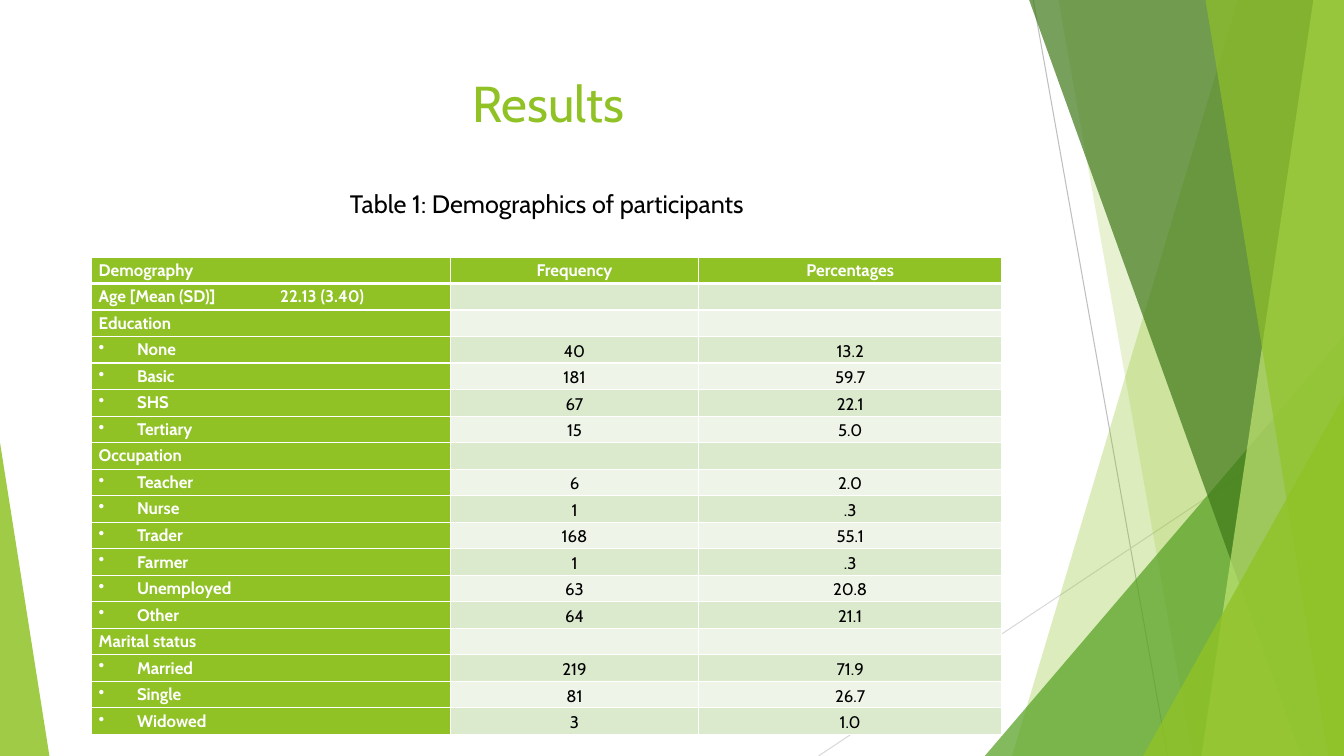
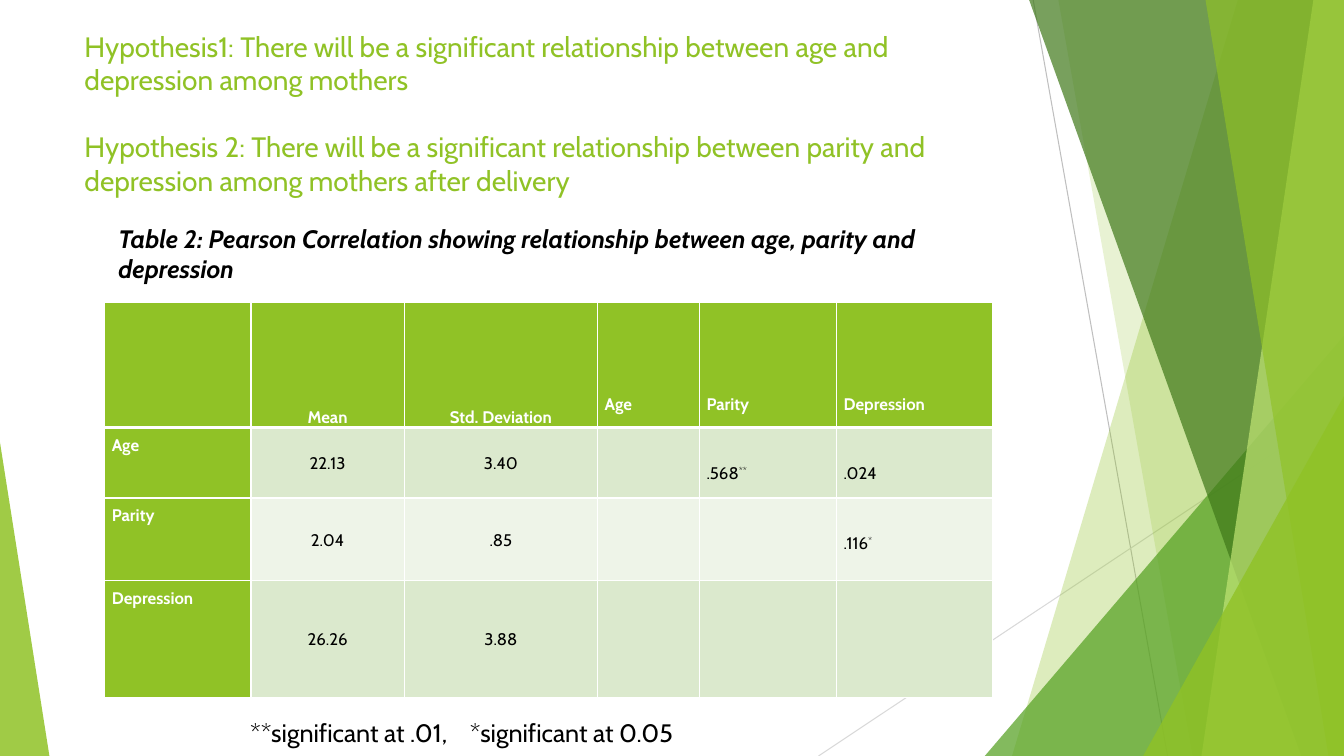
from lxml.etree import SubElement
from pptx import Presentation
from pptx.dml.color import RGBColor
from pptx.enum.shapes import MSO_CONNECTOR, MSO_SHAPE
from pptx.enum.text import MSO_ANCHOR, PP_ALIGN
from pptx.oxml.ns import qn
from pptx.util import Inches, Pt

COLORS = {
    "lime": "90C226", "green": "54A021", "forest": "3F7819", "pale": "C0E474",
    "band_dark": "DBE9CD", "band_light": "EEF4E8", "white": "FFFFFF",
    "black": "000000", "gray": "BFBFBF", "silver": "D9D9D9",
}
COLUMNS, ROWS = 160, 90
UNIT = Inches(1) / 12
LEFT, CENTER = PP_ALIGN.LEFT, PP_ALIGN.CENTER
TOP, MIDDLE, BOTTOM = MSO_ANCHOR.TOP, MSO_ANCHOR.MIDDLE, MSO_ANCHOR.BOTTOM


def grid(*lengths):
    return [round(length * UNIT) for length in lengths]


def color(name):
    return RGBColor.from_string(COLORS[name])


class Deck:
    """Builds slides in one style on a grid of 160 columns by 90 rows."""

    font = "Cabin"

    def __init__(self):
        self.presentation = Presentation()
        width, height = grid(COLUMNS, ROWS)
        self.presentation.slide_width = width
        self.presentation.slide_height = height
        self.slide = None

    def add_slide(self):
        layout = self.presentation.slide_layouts[6]
        self.slide = self.presentation.slides.add_slide(layout)
        self.line((123, 0), (139, ROWS), "gray")
        self.line((COLUMNS, 48.36), (97.44, ROWS), "silver")
        self.facet(147.36, 120.48, "lime", 30)
        self.facet(126, 141.96, "lime", 20)
        self.triangle(117.24, 39.96, COLUMNS, 1, "green", 72)
        self.facet(122.52, 154.92, "forest", 70)
        self.facet(156.36, 143.04, "pale", 70)
        self.facet(143.52, 158.16, "lime", 65)
        self.triangle(136.08, 47.16, COLUMNS, 1, "lime", 80)
        self.triangle(0, 52.68, 5.88, 0, "lime", 85)

    def line(self, start, end, name):
        connector = self.slide.shapes.add_connector(
            MSO_CONNECTOR.STRAIGHT, *grid(*start, *end))
        connector.line.color.rgb = color(name)
        connector.line.width = Pt(0.75)
        SubElement(connector._element.spPr, qn("a:effectLst"))

    def paint(self, shape, name, opacity=100):
        shape.shadow.inherit = False
        shape.fill.solid()
        shape.fill.fore_color.rgb = color(name)
        shape.line.fill.background()
        if opacity < 100:
            fill = shape._element.spPr.find(".//" + qn("a:srgbClr"))
            SubElement(fill, qn("a:alpha"), val=str(opacity * 1000))

    def facet(self, top_column, bottom_column, name, opacity):
        builder = self.slide.shapes.build_freeform(*grid(top_column, 0))
        corners = [(COLUMNS, 0), (COLUMNS, ROWS), (bottom_column, ROWS)]
        builder.add_line_segments([grid(*corner) for corner in corners])
        self.paint(builder.convert_to_shape(), name, opacity)

    def triangle(self, left, top, right, apex, name, opacity):
        shape = self.slide.shapes.add_shape(
            MSO_SHAPE.ISOSCELES_TRIANGLE,
            *grid(left, top, right - left, ROWS - top))
        shape.adjustments[0] = apex
        self.paint(shape, name, opacity)

    def add_text(self, paragraph, text, size, name, align=LEFT, bold=False,
                 italic=False, tab=None):
        paragraph.alignment = align
        body = text.rstrip("*")
        for part, raised in ((body, False), (text[len(body):], True)):
            if not part:
                continue
            run = paragraph.add_run()
            run.text = part
            run.font.name = self.font
            run.font.size = Pt(size)
            run.font.color.rgb = color(name)
            run.font.bold = bold
            run.font.italic = italic
            if raised:
                run._r.get_or_add_rPr().set("baseline", "30000")
        if tab:
            tabs = SubElement(paragraph._p.get_or_add_pPr(), qn("a:tabLst"))
            SubElement(tabs, qn("a:tab"), pos=str(grid(tab)[0]), algn="l")

    def title(self, texts, top, height, size, align=LEFT):
        box = self.slide.shapes.add_textbox(*grid(8.88, top, 112.8, height))
        frame = box.text_frame
        frame.word_wrap = True
        for index, text in enumerate(texts):
            paragraph = frame.add_paragraph() if index else frame.paragraphs[0]
            if index:
                paragraph.space_before = Pt(size * 1.2)
            self.add_text(paragraph, text, size, "lime", align)

    def caption(self, text, box, inset=1.2, **style):
        shape = self.slide.shapes.add_shape(
            MSO_SHAPE.ROUNDED_RECTANGLE, *grid(*box))
        self.paint(shape, "white")
        frame = shape.text_frame
        frame.word_wrap = True
        frame.vertical_anchor = MIDDLE
        frame.margin_left = grid(inset)[0]
        self.add_text(frame.paragraphs[0], text, 18, "black", **style)

    def table(self, left, top, columns, rows, data, layout):
        frame = self.slide.shapes.add_table(
            len(rows), len(columns),
            *grid(left, top, sum(columns), sum(rows)))
        table = frame.table
        table.horz_banding = False
        for column, width in zip(table.columns, grid(*columns)):
            column.width = width
        for row, height in zip(table.rows, grid(*rows)):
            row.height = height
        for row_index, texts in enumerate(data):
            for column_index, text in enumerate(texts):
                self.cell(table.cell(row_index, column_index), text,
                          row_index, column_index,
                          **layout(row_index, column_index))

    def cell(self, cell, text, row, column, anchor=TOP, drop=0, spacing=1.15,
             align=LEFT, tab=None):
        heading = row == 0 or column == 0
        properties = cell._tc.get_or_add_tcPr()
        for side in "LRTB":
            thick = (row == 0 and side == "B") or (row == 1 and side == "T")
            border = SubElement(properties, qn("a:ln" + side),
                                w=str(Pt(3 if thick else 1)))
            fill = SubElement(border, qn("a:solidFill"))
            SubElement(fill, qn("a:srgbClr"), val=COLORS["white"])
        cell.fill.solid()
        band = "band_dark" if row % 2 else "band_light"
        cell.fill.fore_color.rgb = color("lime" if heading else band)
        cell.margin_left = cell.margin_right = Inches(0.07)
        cell.margin_top, cell.margin_bottom = Pt(drop), 0
        cell.vertical_anchor = anchor
        paragraph = cell.text_frame.paragraphs[0]
        paragraph.line_spacing = spacing
        if text.startswith("•"):
            text = text[1:]
            indent = paragraph._p.get_or_add_pPr()
            indent.set("marL", str(Inches(0.38)))
            indent.set("indent", str(-Inches(0.38)))
            SubElement(indent, qn("a:buChar"), char="•")
        if text:
            self.add_text(paragraph, text, 12, "white" if heading else "black",
                          align, heading, tab=tab if "\t" in text else None)
        else:
            SubElement(paragraph._p, qn("a:endParaRPr"), sz="1200")


DEMOGRAPHICS = [
    ("Demography", "Frequency", "Percentages"),
    ("Age [Mean (SD)]\t22.13 (3.40)", "", ""),
    ("Education", "", ""),
    ("•None", "40", "13.2"),
    ("•Basic", "181", "59.7"),
    ("•SHS", "67", "22.1"),
    ("•Tertiary", "15", "5.0"),
    ("Occupation", "", ""),
    ("•Teacher", "6", "2.0"),
    ("•Nurse", "1", ".3"),
    ("•Trader", "168", "55.1"),
    ("•Farmer", "1", ".3"),
    ("•Unemployed", "63", "20.8"),
    ("•Other", "64", "21.1"),
    ("Marital status", "", ""),
    ("•Married", "219", "71.9"),
    ("•Single", "81", "26.7"),
    ("•Widowed", "3", "1.0"),
]
CORRELATIONS = [
    ("", "Mean", "Std. Deviation", "Age", "Parity", "Depression"),
    ("Age", "22.13", "3.40", "", ".568**", ".024"),
    ("Parity", "2.04", ".85", "", "", ".116*"),
    ("Depression", "26.26", "3.88", "", "", ""),
]


def demographics_layout(row, column):
    if column == 0:
        return {"tab": 21.6}
    return {"align": CENTER, "anchor": MIDDLE if row else TOP}


def correlations_layout(row, column):
    if column in (1, 2):
        return {"align": CENTER, "anchor": MIDDLE if row else BOTTOM,
                "spacing": Pt(16)}
    drop = 0 if column == 0 else 20 if row else 60
    return {"drop": drop, "spacing": Pt(20)}


def results_slide(deck):
    deck.add_slide()
    deck.title(["Results"], 8.04, 10.92, 36, CENTER)
    deck.table(10.92, 30.6, [42.72, 29.52, 36.12], [3.16] * len(DEMOGRAPHICS),
               DEMOGRAPHICS, demographics_layout)
    deck.caption("Table 1: Demographics of participants",
                 (10.92, 20.4, 108.36, 7.68), align=CENTER)


def hypotheses_slide(deck):
    deck.add_slide()
    deck.title([
        "Hypothesis1: There will be a significant relationship between age "
        "and depression among mothers",
        "Hypothesis 2: There will be a significant relationship between parity "
        "and depression among mothers after delivery",
    ], 2.88, 17.28, 20)
    deck.table(12.48, 36, [17.4, 18.24, 23.04, 12.12, 16.32, 18.6],
               [14.88, 8.4, 9.84, 13.92], CORRELATIONS, correlations_layout)
    deck.caption("Table 2: Pearson Correlation showing relationship between "
                 "age, parity and depression",
                 (12.48, 25.8, 105.72, 8.76), bold=True, italic=True)
    deck.caption("**significant at .01,\t*significant at 0.05",
                 (20.4, 84.36, 69.24, 5.64), inset=9.12, tab=26.16)


def main():
    deck = Deck()
    results_slide(deck)
    hypotheses_slide(deck)
    deck.presentation.save("out.pptx")


if __name__ == "__main__":
    main()
